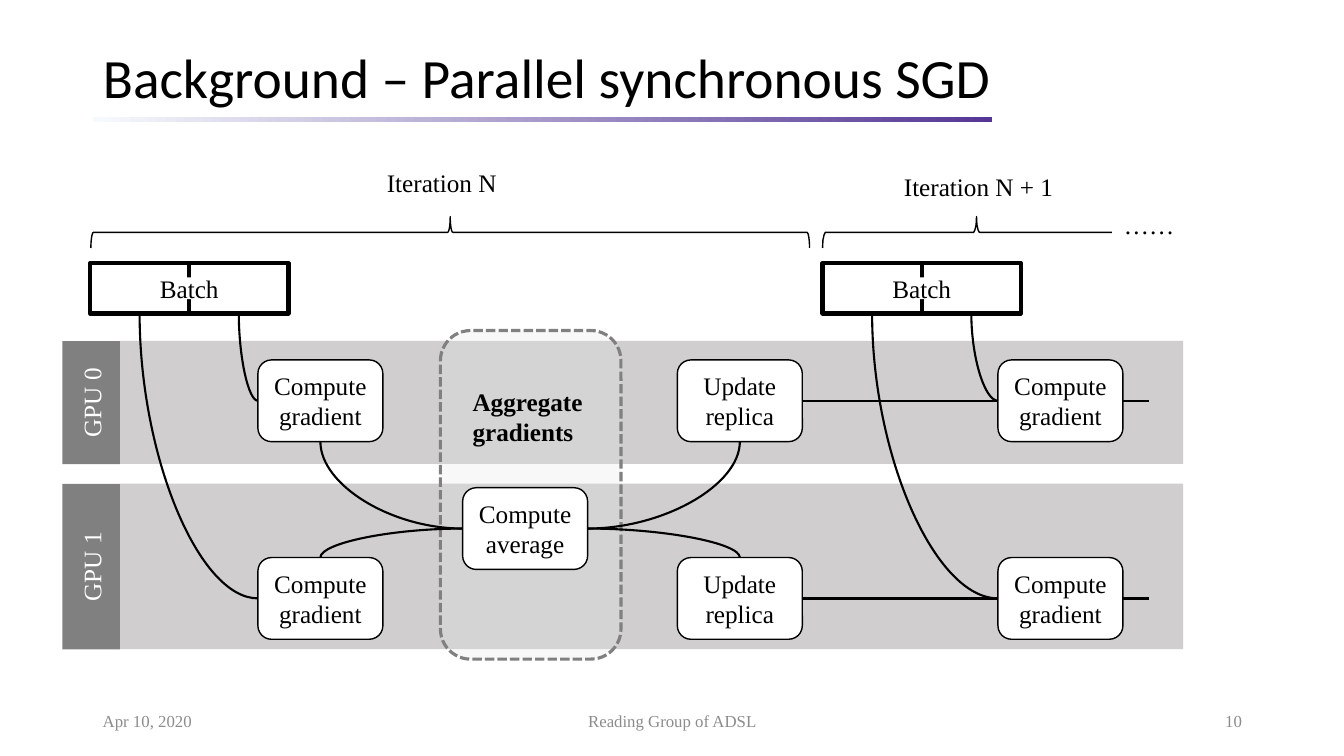
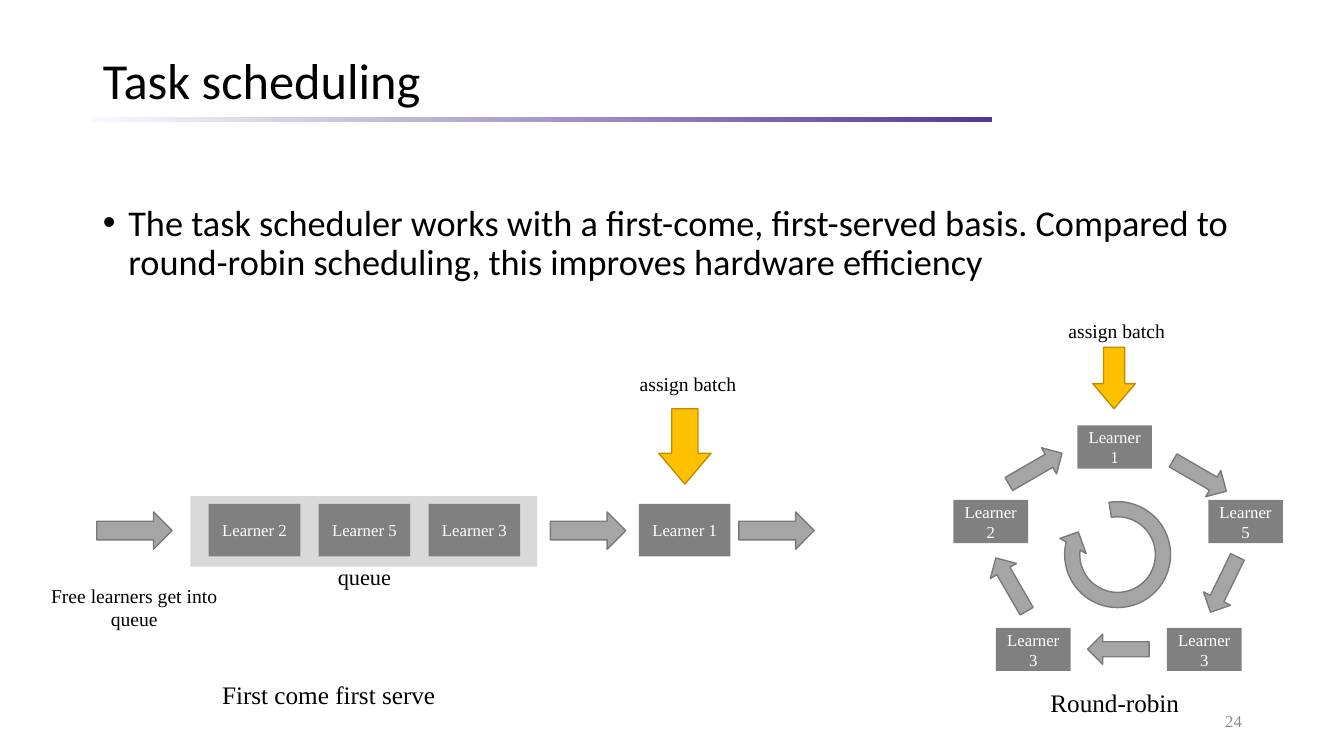
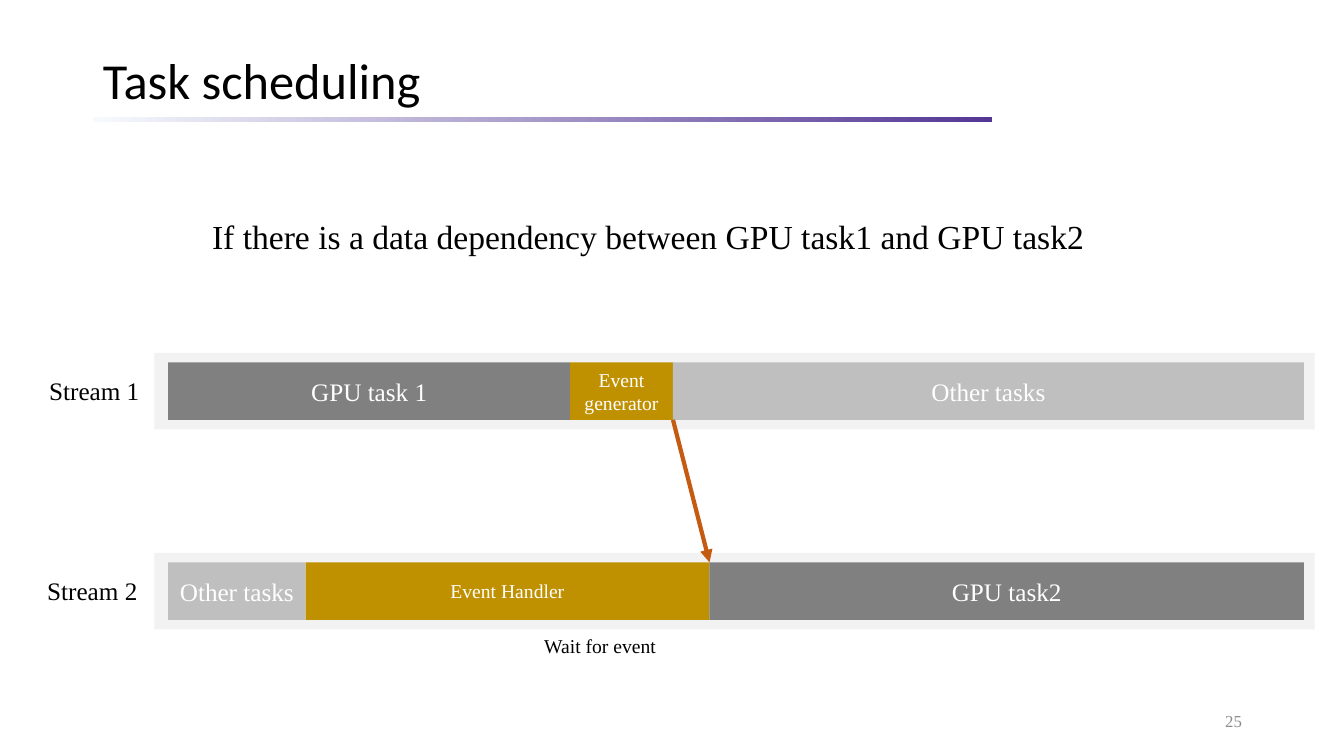
from pptx import Presentation
from pptx.dml.color import RGBColor
from pptx.enum.dml import MSO_LINE
from pptx.enum.shapes import MSO_CONNECTOR, MSO_SHAPE
from pptx.enum.text import MSO_ANCHOR, MSO_AUTO_SIZE, PP_ALIGN
from pptx.oxml.ns import qn
from pptx.util import Cm, Pt
from lxml.etree import SubElement

BLACK = RGBColor(0x00, 0x00, 0x00)
WHITE = RGBColor(0xFF, 0xFF, 0xFF)
FOOTER_GREY = RGBColor(0x8C, 0x8C, 0x8C)
BAR_START = RGBColor(0xF7, 0xFA, 0xFD)
BAR_END = RGBColor(0x54, 0x37, 0x95)
LANE = RGBColor(0xD0, 0xCE, 0xCE)
DARK = RGBColor(0x80, 0x80, 0x80)
HAZE = RGBColor(0xE7, 0xE6, 0xE6)
QUEUE = RGBColor(0xD9, 0xD9, 0xD9)
STREAM = RGBColor(0xF2, 0xF2, 0xF2)
OTHER = RGBColor(0xBF, 0xBF, 0xBF)
ARROW = RGBColor(0xA5, 0xA5, 0xA5)
ARROW_EDGE = RGBColor(0x7A, 0x7A, 0x7A)
YELLOW = RGBColor(0xFF, 0xC0, 0x00)
YELLOW_EDGE = RGBColor(0xBD, 0x8E, 0x00)
EVENT = RGBColor(0xBF, 0x90, 0x00)
SIGNAL = RGBColor(0xC5, 0x5A, 0x11)

HEADING_FONT = "Calibri"
TEXT_FONT = "Times New Roman"
TOP, LEFT, BOTTOM, RIGHT = range(4)
INSETS = ("margin_left", "margin_right", "margin_top", "margin_bottom")


def cm(*lengths):
    return [Cm(length) for length in lengths]


class Deck:
    def __init__(self):
        self.prs = Presentation()
        self.prs.slide_width, self.prs.slide_height = cm(33.87, 19.05)
        self.slide = None

    def start(self, title, box, size, number, layout=5):
        self.slide = self.prs.slides.add_slide(self.prs.slide_layouts[layout])
        bar = self.block((2.34, 2.95, 22.66, 0.13), fill=BAR_END)
        bar.fill.gradient()
        bar.fill.gradient_angle = 0
        for stop, color in zip(bar.fill.gradient_stops, (BAR_START, BAR_END)):
            stop.color.rgb = color
        self.placeholder(self.slide.shapes.title, title, box, size, MSO_ANCHOR.MIDDLE)
        self.footer((23.93, 17.65, 7.62, 1.02), number, PP_ALIGN.RIGHT)

    def footer(self, box, text, align):
        self.label(box, text, 12, align, FOOTER_GREY, anchor=MSO_ANCHOR.MIDDLE)

    def placeholder(self, holder, text, box, size, anchor):
        for name, value in zip(("left", "top", "width", "height"), cm(*box)):
            setattr(holder, name, value)
        self.set_text(holder, text, size, BLACK, PP_ALIGN.LEFT, anchor, face=HEADING_FONT)
        holder.text_frame.auto_size = MSO_AUTO_SIZE.NONE
        paragraph = holder.text_frame.paragraphs[0]
        for name, value in {"line_spacing": 0.9, "space_before": Pt(0)}.items():
            setattr(paragraph, name, value)

    def bullet(self, text, box, size):
        body = self.slide.placeholders[1]
        self.placeholder(body, text, box, size, MSO_ANCHOR.TOP)
        properties = body.text_frame.paragraphs[0]._p.get_or_add_pPr()
        properties.set("marL", str(Cm(0.64)))
        properties.set("indent", str(-Cm(0.64)))

    def set_text(self, shape, text, size, color, align, anchor, bold=False, face=TEXT_FONT):
        frame = shape.text_frame
        frame.text = text
        frame.word_wrap = True
        frame.vertical_anchor = anchor
        for paragraph in frame.paragraphs:
            paragraph.alignment = align
            style = {"name": face, "size": Pt(size), "bold": bold}
            for name, value in style.items():
                setattr(paragraph.font, name, value)
            paragraph.font.color.rgb = color

    def block(self, box, text="", fill=None, edge=None, weight=1, size=18, color=WHITE,
              kind=MSO_SHAPE.RECTANGLE, rotation=0, adjust=()):
        shape = self.slide.shapes.add_shape(kind, *cm(*box))
        shape.rotation = rotation
        for index, value in enumerate(adjust):
            shape.adjustments[index] = value
        self.paint(shape, fill, edge, weight)
        if text:
            self.set_text(shape, text, size, color, PP_ALIGN.CENTER, MSO_ANCHOR.MIDDLE)
        return shape

    def paint(self, shape, fill, edge, weight):
        shape.shadow.inherit = False
        for target, color in ((shape.fill, fill), (shape.line.fill, edge)):
            if color is None:
                target.background()
            else:
                target.solid()
                target.fore_color.rgb = color
        if edge is not None:
            shape.line.width = Pt(weight)

    def step(self, left, top, text):
        return self.block((left, top, 3.15, 2.06), text, WHITE, BLACK, color=BLACK,
                          kind=MSO_SHAPE.ROUNDED_RECTANGLE)

    def arrow(self, box, rotation=0):
        self.block(box, fill=ARROW, edge=ARROW_EDGE, kind=MSO_SHAPE.RIGHT_ARROW,
                   rotation=rotation)

    def assign_arrow(self, box, label_box):
        self.block(box, fill=YELLOW, edge=YELLOW_EDGE, kind=MSO_SHAPE.RIGHT_ARROW,
                   rotation=90, adjust=(0.5, 0.59))
        self.label(label_box, "assign batch", 14, PP_ALIGN.CENTER)

    def label(self, box, text, size=18, align=PP_ALIGN.LEFT, color=BLACK, bold=False,
              anchor=MSO_ANCHOR.TOP):
        shape = self.slide.shapes.add_textbox(*cm(*box))
        self.set_text(shape, text, size, color, align, anchor, bold)
        return shape

    def batch(self, left):
        top, width, height = 6.63, 2.5, 1.27
        halves = [self.block((left + i * width, top, width, height),
                             fill=WHITE, edge=BLACK, weight=3) for i in range(2)]
        name = self.label((left + width - 0.85, top + 0.36, 1.7, 0.55), "Batch",
                          align=PP_ALIGN.CENTER, anchor=MSO_ANCHOR.MIDDLE)
        name.fill.solid()
        name.fill.fore_color.rgb = WHITE
        for inset in INSETS:
            setattr(name.text_frame, inset, 0)
        return halves

    def brace(self, left, top, length, depth):
        box = (left + (length - depth) / 2, top - (length - depth) / 2, depth, length)
        self.block(box, edge=BLACK, kind=MSO_SHAPE.LEFT_BRACE, rotation=90)

    def open_brace(self, left, top, tip, right, depth):
        middle = top + depth / 2
        outline = [(left, top + depth), (left + 0.01, middle + 0.19),
                   (left + 0.04, middle + 0.06), (left + 0.07, middle)]
        rise = [(tip - 0.07, middle), (tip - 0.04, middle - 0.06),
                (tip - 0.01, middle - 0.19), (tip, top)]
        fall = [(2 * tip - x, y) for x, y in reversed(rise[:-1])]
        points = [cm(*point) for point in outline + rise + fall + [(right, middle)]]
        builder = self.slide.shapes.build_freeform(*points[0])
        builder.add_line_segments(points[1:], close=False)
        self.paint(builder.convert_to_shape(), None, BLACK, 1)

    def line(self, start=(0, 0), end=(0, 0), begin_at=None, end_at=None, color=BLACK,
             weight=1.5, curved=False, head=False):
        kind = MSO_CONNECTOR.CURVE if curved else MSO_CONNECTOR.STRAIGHT
        connector = self.slide.shapes.add_connector(kind, *cm(*start, *end))
        if begin_at:
            connector.begin_connect(*begin_at)
        if end_at:
            connector.end_connect(*end_at)
        connector.line.color.rgb = color
        connector.line.width = Pt(weight)
        properties = connector._element.spPr
        if curved:
            properties.find(qn("a:prstGeom")).set("prst", "curvedConnector2")
        if head:
            SubElement(properties.find(qn("a:ln")), qn("a:tailEnd")).set("type", "triangle")
        SubElement(properties, qn("a:effectLst"))


def parallel_sgd(deck):
    deck.start("Background – Parallel synchronous SGD", (2.34, 1.09, 29.21, 1.9), 39.6, "10")
    deck.footer((11.23, 17.65, 11.43, 1.02), "Reading Group of ADSL", PP_ALIGN.CENTER)
    deck.footer((2.34, 17.65, 7.62, 1.02), "Apr 10, 2020", PP_ALIGN.LEFT)

    for gpu, top, height in (("GPU 0", 8.59, 3.1), ("GPU 1", 12.19, 4.17)):
        deck.block((3.02, top, 26.8, height), fill=LANE)
        deck.block((2.3 - height / 2, top + height / 2 - 0.72, height, 1.45), gpu, DARK,
                   rotation=270)

    aggregate = deck.block((11.1, 8.33, 4.55, 8.28), fill=HAZE, edge=DARK, weight=2.25,
                           kind=MSO_SHAPE.ROUNDED_RECTANGLE)
    aggregate.line.dash_style = MSO_LINE.SQUARE_DOT
    haze = aggregate._element.spPr.find(qn("a:solidFill"))[0]
    SubElement(haze, qn("a:alpha")).set("val", "26000")
    deck.label((11.66, 9.6, 3.43, 1.8), "Aggregate gradients", bold=True)
    average = deck.step(11.66, 12.29, "Compute\vaverage")

    batch, next_batch = deck.batch(2.27), deck.batch(20.73)
    for row, top in enumerate((9.07, 14.05)):
        gradient = deck.step(6.5, top, "Compute gradient")
        update = deck.step(17.07, top, "Update\nreplica")
        next_gradient = deck.step(25.15, top, "Compute gradient")
        facing = TOP if row else BOTTOM
        for begin_at, end_at in (
            ((average, LEFT), (gradient, facing)),
            ((average, RIGHT), (update, facing)),
            ((gradient, LEFT), (batch[1 - row], BOTTOM)),
            ((next_gradient, LEFT), (next_batch[1 - row], BOTTOM)),
        ):
            deck.line(begin_at=begin_at, end_at=end_at, curved=True)
        deck.line(begin_at=(update, RIGHT), end_at=(next_gradient, LEFT))
        deck.line(end=(28.96, top + 1.03), begin_at=(next_gradient, RIGHT))

    deck.brace(2.29, 5.46, 18.11, 0.79)
    deck.open_brace(20.73, 5.46, 24.61, 28.02, 0.79)
    deck.label((9.5, 4.09, 9.7, 1.02), "Iteration N")
    deck.label((22.53, 4.19, 9.7, 1.02), "Iteration N + 1")
    deck.label((28.02, 5.13, 1.88, 1.07), "……", align=PP_ALIGN.CENTER,
               anchor=MSO_ANCHOR.MIDDLE)


def scheduling_policies(deck):
    deck.start("Task scheduling", (2.34, 1.24, 22.96, 1.7), 36, "24", layout=1)
    deck.bullet("The task scheduler works with a first-come, first-served basis. "
                "Compared to round-robin scheduling, this improves hardware efficiency",
                (2.34, 5.03, 29.21, 3.05), 25.9)

    deck.block((4.8, 12.5, 8.74, 1.78), fill=QUEUE)
    queued = [(5.26 + 2.77 * i, f"Learner {n}") for i, n in enumerate((2, 5, 3))]
    for left, learner in queued + [(16.1, "Learner 1")]:
        deck.block((left, 12.7, 2.31, 1.32), learner, DARK, size=12)
    for left in (2.44, 13.87, 18.62):
        deck.arrow((left, 12.9, 1.9, 0.94))
    deck.assign_arrow((16.31, 10.59, 1.9, 1.32), (15.27, 9.25, 4.14, 1.04))

    for left, top, number in ((27.15, 10.72, 1), (30.45, 12.6, 5), (29.41, 15.82, 3),
                              (25.1, 15.82, 3), (24.03, 12.6, 2)):
        deck.block((left, top, 1.88, 1.09), f"Learner {number}", DARK, size=12)
    for left, top, rotation in ((29.46, 11.61, 30), (30.07, 14.35, 116), (27.41, 15.98, 180),
                                (24.71, 14.35, 240), (25.32, 11.43, 330)):
        deck.arrow((left, top, 1.55, 0.76), rotation)
    deck.assign_arrow((27.3, 8.99, 1.55, 1.07), (26.47, 7.9, 3.35, 0.86))
    deck.block((26.64, 12.45, 3.05, 3.05), fill=ARROW, edge=ARROW_EDGE,
               kind=MSO_SHAPE.CIRCULAR_ARROW, rotation=210,
               adjust=(0.125, 11.42, 204.58, 30.37, 0.125))

    for box, text, size in (
        ((6.71, 14.07, 4.95, 1.14), "queue", 16),
        ((0.91, 14.58, 4.95, 1.78), "Free learners get into queue", 14),
        ((3.56, 16.99, 9.45, 1.02), "First come first serve", 18),
        ((23.37, 17.2, 9.45, 1.02), "Round-robin", 18),
    ):
        deck.label(box, text, size, PP_ALIGN.CENTER)


def event_dependency(deck):
    deck.start("Task scheduling", (2.34, 1.24, 22.96, 1.7), 36, "25")
    deck.label((3.28, 5.31, 26.11, 2.31),
               "If there is a data dependency between GPU task1 and GPU task2", 24,
               PP_ALIGN.CENTER)
    streams = (
        ("Stream 1", 0.99, 8.89, (("GPU task 1", 10.13, DARK, 18),
                                  ("Event generator", 2.59, EVENT, 14),
                                  ("Other tasks", 15.9, OTHER, 18))),
        ("Stream 2", 0.94, 13.93, (("Other tasks", 3.46, OTHER, 18),
                                   ("Event Handler", 10.18, EVENT, 14),
                                   ("GPU task2", 14.98, DARK, 18))),
    )
    for stream, label_left, top, tasks in streams:
        deck.block((3.89, top, 29.24, 1.93), fill=STREAM)
        deck.label((label_left, top + 0.44, 3, 1.04), stream)
        left = 4.24
        for task, width, fill, size in tasks:
            deck.block((left, top + 0.24, width, 1.45), task, fill, size=size)
            left += width
    deck.line((16.96, 10.58), (17.88, 14.17), color=SIGNAL, weight=3, head=True)
    deck.label((12.37, 15.85, 5.51, 0.86), "Wait for event", 14, PP_ALIGN.CENTER)


def main():
    deck = Deck()
    for build in (parallel_sgd, scheduling_policies, event_dependency):
        build(deck)
    deck.prs.save("out.pptx")


if __name__ == "__main__":
    main()
